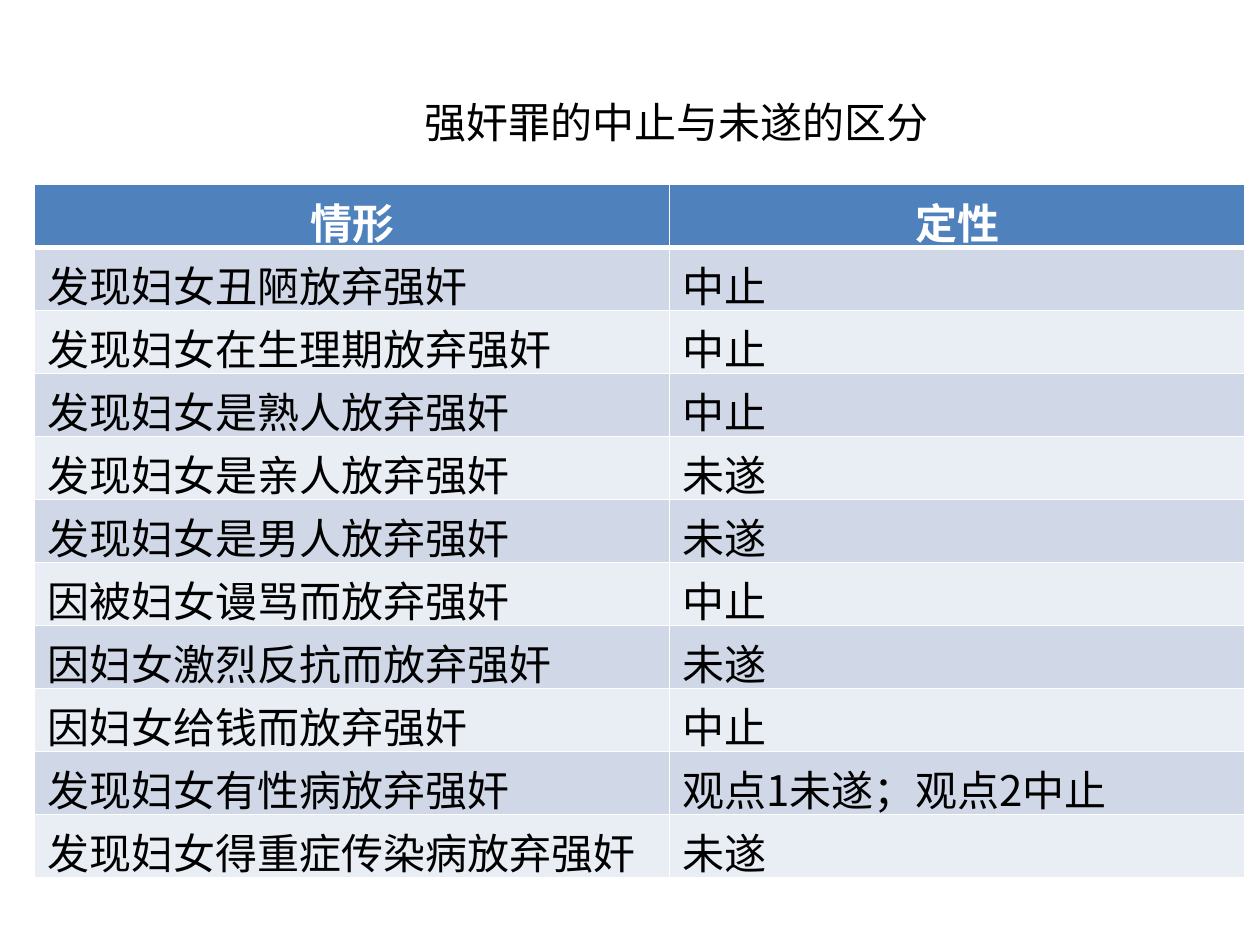
from lxml.etree import SubElement
from pptx import Presentation
from pptx.dml.color import RGBColor
from pptx.enum.text import MSO_ANCHOR, MSO_AUTO_SIZE, PP_ALIGN as Align
from pptx.oxml.ns import qn
from pptx.util import Cm, Pt

FONT = "Noto Sans CJK SC"
BLACK, WHITE = "000000", "FFFFFF"
HEADER_FILL = "4F81BD"
BAND_FILLS = ("D0D8E8", "E9EDF4")

TITLE = "强奸罪的中止与未遂的区分"
ROWS = [
    ("情形", "定性"),
    ("发现妇女丑陋放弃强奸", "中止"),
    ("发现妇女在生理期放弃强奸", "中止"),
    ("发现妇女是熟人放弃强奸", "中止"),
    ("发现妇女是亲人放弃强奸", "未遂"),
    ("发现妇女是男人放弃强奸", "未遂"),
    ("因被妇女谩骂而放弃强奸", "中止"),
    ("因妇女激烈反抗而放弃强奸", "未遂"),
    ("因妇女给钱而放弃强奸", "中止"),
    ("发现妇女有性病放弃强奸", "观点1未遂；观点2中止"),
    ("发现妇女得重症传染病放弃强奸", "未遂"),
]


def rgb(value):
    return RGBColor.from_string(value)


def write(frame, text, color, align, bold=False):
    para = frame.paragraphs[0]
    para.text = text
    para.alignment = align
    para.font.name = FONT
    para.font.size = Pt(24)
    para.font.bold = bold
    para.font.color.rgb = rgb(color)


def set_borders(cell, bottom_width):
    """Give the cell white borders; call before filling, as borders come first in the XML."""
    props = cell._tc.get_or_add_tcPr()
    for side, width in (("L", 1), ("R", 1), ("T", 1), ("B", bottom_width)):
        line = SubElement(props, qn(f"a:ln{side}"), w=str(Pt(width)))
        fill = SubElement(line, qn("a:solidFill"))
        SubElement(fill, qn("a:srgbClr"), val=WHITE)


def add_title(page, left, top, width, height):
    box = page.shapes.add_textbox(left, top, width, height)
    frame = box.text_frame
    frame.word_wrap = True
    frame.auto_size = MSO_AUTO_SIZE.NONE
    frame.vertical_anchor = MSO_ANCHOR.MIDDLE
    write(frame, TITLE, BLACK, Align.JUSTIFY)


def add_case_table(page, left, top, widths, row_height):
    table = page.shapes.add_table(
        len(ROWS), len(widths), left, top, sum(widths), row_height * len(ROWS)
    ).table
    for column, width in zip(table.columns, widths):
        column.width = width
    for index, texts in enumerate(ROWS):
        header = index == 0
        table.rows[index].height = row_height
        for cell, text in zip(table.rows[index].cells, texts):
            set_borders(cell, 3 if header else 1)
            # The font's deep descent would otherwise stretch the rows.
            cell.margin_bottom = Cm(-0.1)
            cell.fill.solid()
            cell.fill.fore_color.rgb = rgb(
                HEADER_FILL if header else BAND_FILLS[(index - 1) % 2]
            )
            write(
                cell.text_frame,
                text,
                WHITE if header else BLACK,
                Align.CENTER if header else Align.LEFT,
                header,
            )


def main():
    deck = Presentation()
    deck.slide_width, deck.slide_height = Cm(25.4), Cm(19.05)
    page = deck.slides.add_slide(deck.slide_layouts[6])
    add_title(page, Cm(8.3), Cm(1.81), Cm(11.5), Cm(1.27))
    add_case_table(page, Cm(0.7), Cm(3.72), (Cm(12.8), Cm(11.6)), Cm(1.27))
    deck.save("out.pptx")


if __name__ == "__main__":
    main()
